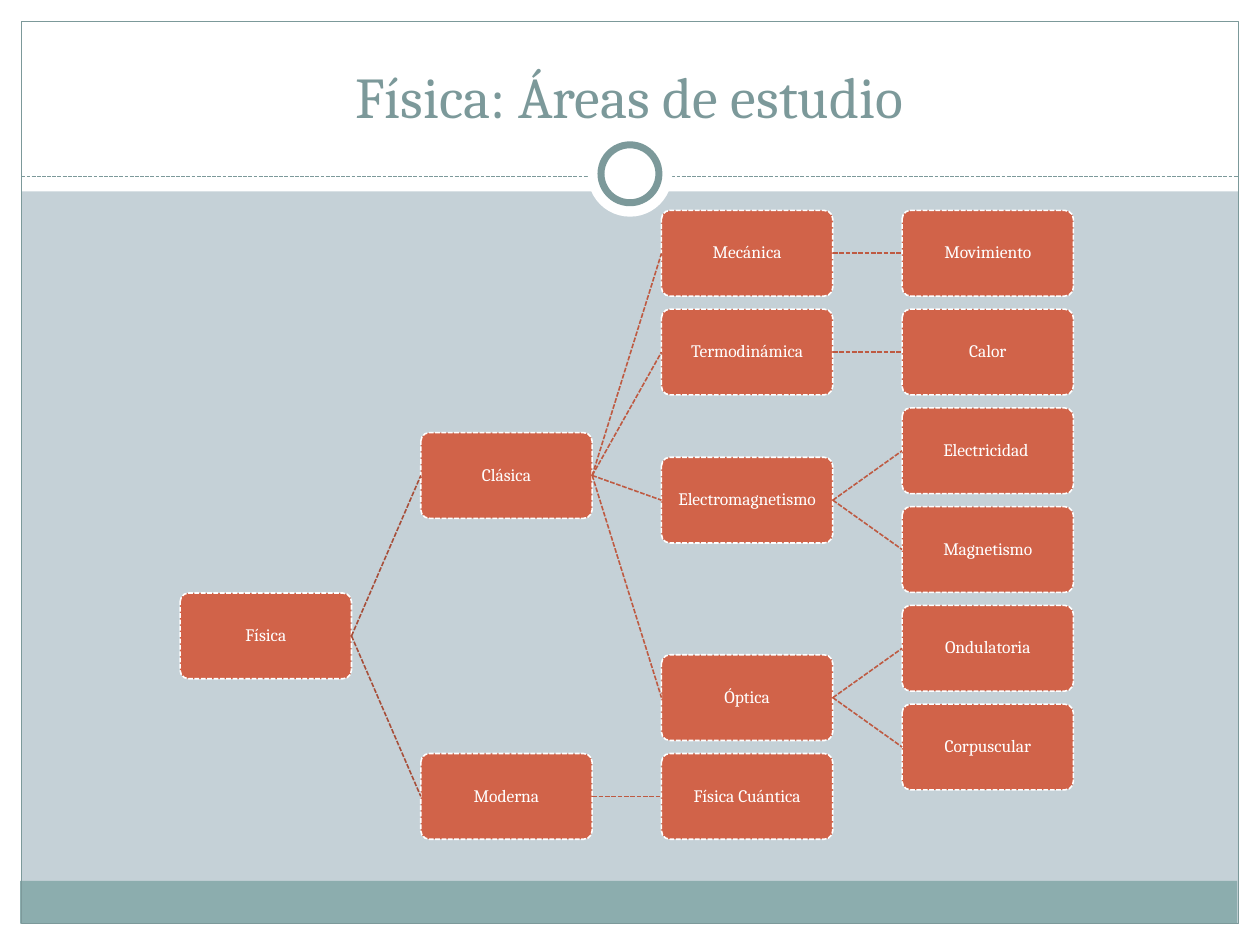
from dataclasses import dataclass

from lxml.etree import SubElement
from pptx import Presentation
from pptx.dml.color import RGBColor as RGB
from pptx.enum.dml import MSO_LINE as DASH
from pptx.enum.shapes import MSO_CONNECTOR as CONN, MSO_SHAPE as SHAPE
from pptx.enum.text import MSO_ANCHOR as ANCHOR, PP_ALIGN as ALIGN
from pptx.oxml.ns import qn
from pptx.util import Inches, Pt


@dataclass(frozen=True)
class Theme:
    font: str = "Cambria"
    background: str = "C5D1D7"
    white: str = "FFFFFF"
    frame: str = "7C999A"
    footer: str = "8CADAE"
    node: str = "D16349"
    root_link: str = "A74F3A"
    link: str = "BE5A42"
    title_size: float = 33
    node_size: float = 10
    thin: float = 0.75
    dashed: float = 0.9
    ring: float = 4


# Tree grid: percent of slide width for columns, of slide height for rows
COL_LEFT, COL_STEP, NODE_W = 14.3, 19.1, 13.6
ROW_TOP, ROW_STEP, NODE_H = 22.27, 10.45, 9.07

# Each node is (label, children); a leaf has its row instead of children
TREE = ("Física", [
    ("Clásica", [
        ("Mecánica", [("Movimiento", 0)]),
        ("Termodinámica", [("Calor", 1)]),
        ("Electromagnetismo", [("Electricidad ", 2), ("Magnetismo", 3)]),
        ("Óptica", [("Ondulatoria", 4), ("Corpuscular", 5)]),
    ]),
    ("Moderna", [("Física Cuántica", 5.5)]),
])


def write(tf, text, *, font, size, color, anchor=ANCHOR.MIDDLE, inset=0.03, spacing=1.0):
    """Put one centred paragraph in a text frame."""
    tf.word_wrap = True
    tf.vertical_anchor = anchor
    tf.margin_left = tf.margin_right = tf.margin_top = tf.margin_bottom = Inches(inset)
    p = tf.paragraphs[0]
    p.alignment = ALIGN.CENTER
    p.line_spacing = spacing
    r = p.add_run()
    r.text = text
    r.font.name = font
    r.font.size = Pt(size)
    r.font.color.rgb = RGB.from_string(color)


def row_of(node):
    """A leaf keeps its row; a parent sits midway between first and last child."""
    branch = node[1]
    if not isinstance(branch, list):
        return branch
    return (row_of(branch[0]) + row_of(branch[-1])) / 2


class Deck:
    def __init__(self, theme):
        self.theme = theme
        self.prs = Presentation()
        self.prs.slide_width, self.prs.slide_height = Inches(10), Inches(7.5)
        self.slide = self.prs.slides.add_slide(self.prs.slide_layouts[5])
        fill = self.slide.background.fill
        fill.solid()
        fill.fore_color.rgb = RGB.from_string(theme.background)

    def x(self, percent):
        return round(self.prs.slide_width * percent / 100)

    def y(self, percent):
        return round(self.prs.slide_height * percent / 100)

    def box(self, left, top, width, height):
        return self.x(left), self.y(top), self.x(width), self.y(height)

    def stroke(self, line, color, width, dash=None):
        line.color.rgb = RGB.from_string(color)
        line.width = Pt(width)
        if dash:
            line.dash_style = dash

    def shape(self, kind, at, fill=None, line=None, width=None, dash=None):
        sp = self.slide.shapes.add_shape(kind, *self.box(*at))
        sp.shadow.inherit = False
        if fill:
            sp.fill.solid()
            sp.fill.fore_color.rgb = RGB.from_string(fill)
        else:
            sp.fill.background()
        if line:
            self.stroke(sp.line, line, width, dash)
        else:
            sp.line.fill.background()
        return sp

    def line(self, color, width, start=(0, 0), end=(0, 0)):
        ends = self.x(start[0]), self.y(start[1]), self.x(end[0]), self.y(end[1])
        cxn = self.slide.shapes.add_connector(CONN.STRAIGHT, *ends)
        self.stroke(cxn.line, color, width, DASH.SQUARE_DOT)
        SubElement(cxn.element.spPr, qn("a:effectLst"))
        return cxn

    def link(self, parent, child, color):
        cxn = self.line(color, self.theme.dashed)
        cxn.begin_connect(parent, 3)
        cxn.end_connect(child, 1)

    def title(self, text, at):
        sp = self.slide.shapes.title
        sp.left, sp.top, sp.width, sp.height = self.box(*at)
        write(sp.text_frame, text, font=self.theme.font, size=self.theme.title_size,
              color=self.theme.frame, anchor=ANCHOR.BOTTOM, inset=0.05)
        self.slide.shapes.element.append(sp.element)  # bring above the white bands

    def node(self, label, col, row):
        t = self.theme
        at = (COL_LEFT + col * COL_STEP, ROW_TOP + row * ROW_STEP, NODE_W, NODE_H)
        sp = self.shape(SHAPE.ROUNDED_RECTANGLE, at, t.node, t.white, t.dashed,
                        DASH.SQUARE_DOT)
        sp.adjustments[0] = 0.1
        write(sp.text_frame, label, font=t.font, size=t.node_size, color=t.white,
              spacing=0.9)
        return sp

    def tree(self, node, col=0):
        label, branch = node
        parent = self.node(label, col, row_of(node))
        if isinstance(branch, list):
            for child in branch:
                color = self.theme.link if col else self.theme.root_link
                self.link(parent, self.tree(child, col + 1), color)
        return parent


def main():
    t = Theme()
    deck = Deck(t)

    # White margins, with the top one as title band
    for at in ((0, 97.73, 100, 2.27), (0, 0, 100, 20.27),
               (0, 0, 1.7, 100), (98.3, 0, 1.7, 100)):
        deck.shape(SHAPE.RECTANGLE, at, t.white)

    # Footer band, frame and dashed rule
    deck.shape(SHAPE.RECTANGLE, (1.6, 93.2, 96.6, 4.53), t.footer)
    deck.shape(SHAPE.RECTANGLE, (1.7, 2.27, 96.6, 95.46), line=t.frame, width=t.thin)
    deck.line(t.frame, t.thin, (1.7, 18.67), (98.3, 18.67))

    # Ring in the middle of the rule
    deck.shape(SHAPE.OVAL, (46.65, 14, 6.7, 8.93), t.white)
    deck.shape(SHAPE.OVAL, (47.7, 15.33, 4.6, 6.13), t.white, t.frame, t.ring)

    # Title and tree of study areas
    deck.title("Física: Áreas de estudio", (3.3, 3.33, 93.3, 11.07))
    deck.tree(TREE)

    deck.prs.save("out.pptx")


if __name__ == "__main__":
    main()
